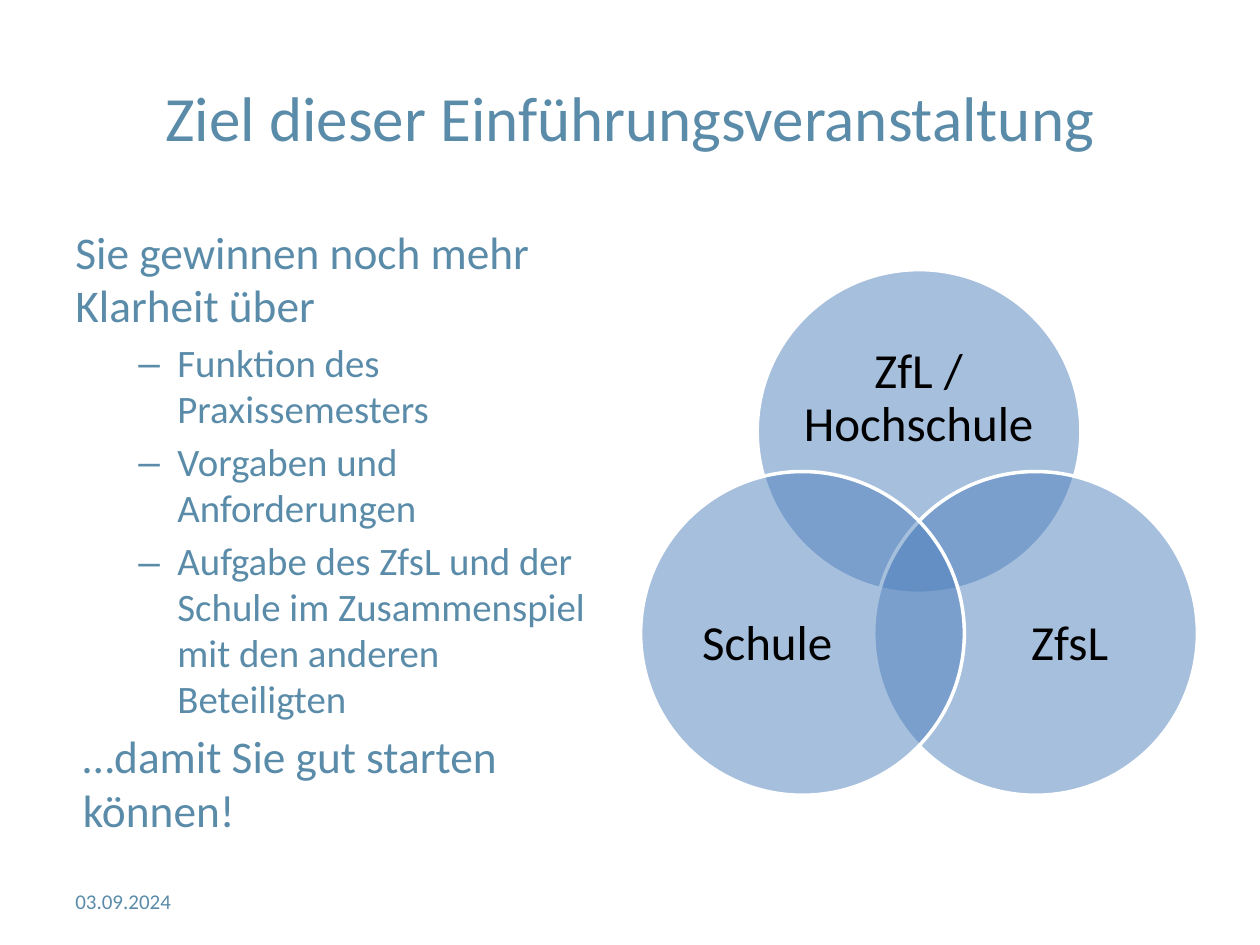
"""Build the slide on the aims of the introductory event."""
import math
from dataclasses import dataclass

from lxml import etree
from pptx import Presentation
from pptx.dml.color import RGBColor
from pptx.enum.shapes import MSO_SHAPE
from pptx.enum.text import MSO_ANCHOR, PP_ALIGN
from pptx.oxml.ns import qn
from pptx.util import Pt

OVAL = MSO_SHAPE.OVAL
TOP, MIDDLE = MSO_ANCHOR.TOP, MSO_ANCHOR.MIDDLE
LEFT, CENTER = PP_ALIGN.LEFT, PP_ALIGN.CENTER
BLANK_LAYOUT = 6
FONT = "Calibri"
TEAL, BLUE, WHITE, BLACK = "5A8CAA", "4F81BD", "FFFFFF", "000000"
DIAGRAM_CENTER = (525.2, 323.5)
DIAMETER = 185
ORBIT = 76.9


@dataclass
class Area:
    """A rectangle in points."""
    left: float
    top: float
    width: float
    height: float

    def lengths(self) -> list:
        """Return the four lengths for python-pptx."""
        return [Pt(value) for value in (self.left, self.top, self.width, self.height)]


@dataclass
class Line:
    """A body paragraph with its size, indents and optional bullet."""
    text: str
    size: float
    margin: float = 0
    indent: float = 0
    bullet: str = ""


@dataclass
class Circle:
    """A circle of the diagram, placed by angle, with its label area."""
    text: str
    angle: float
    label: Area


BODY = [
    Line("Sie gewinnen noch mehr Klarheit über", 25.9),
    *(Line(text, 22.2, 58.3, -22.3, "–") for text in (
        "Funktion des Praxissemesters",
        "Vorgaben und Anforderungen",
        "Aufgabe des ZfsL und der Schule im Zusammenspiel mit den anderen Beteiligten",
    )),
    Line("…damit Sie gut starten können!", 25.9, 4.3),
]
CIRCLES = [
    Circle("ZfL / Hochschule", -90, Area(457.2, 186.5, 135.4, 82.8)),
    Circle("ZfsL", 30, Area(555.8, 317.5, 110.9, 101.5)),
    Circle("Schule", 150, Area(383, 317.5, 110.9, 101.5)),
]


def color(value: str) -> RGBColor:
    """Turn a hex string into a colour."""
    return RGBColor.from_string(value)


def style(para, size: float, shade: str) -> None:
    """Format every run of a paragraph."""
    for span in para.runs:
        span.font.name = FONT
        span.font.size = Pt(size)
        span.font.color.rgb = color(shade)


def add_box(page, area: Area, anchor=TOP):
    """Add a wrapping text box and return its text frame."""
    frame = page.shapes.add_textbox(*area.lengths()).text_frame
    frame.word_wrap = True
    frame.vertical_anchor = anchor
    return frame


def add_text(page, area: Area, text: str, size: float, shade: str, align=LEFT):
    """Add a vertically centred one-paragraph box and return its frame."""
    frame = add_box(page, area, MIDDLE)
    frame.text = text
    para = frame.paragraphs[0]
    para.alignment = align
    style(para, size, shade)
    return frame


def add_body(page, area: Area, lines: list[Line]) -> None:
    """Add the body text with its dashed list."""
    frame = add_box(page, area)
    for number, line in enumerate(lines):
        para = frame.paragraphs[0] if number == 0 else frame.add_paragraph()
        para.text = line.text
        para.line_spacing = 0.98
        if number:
            para.space_before = Pt(line.size * 0.2)
        properties = para._p.get_or_add_pPr()
        properties.set("marL", str(Pt(line.margin)))
        properties.set("indent", str(Pt(line.indent)))
        if line.bullet:
            para.level = 1
            etree.SubElement(properties, qn("a:buFont")).set("typeface", "Arial")
            etree.SubElement(properties, qn("a:buChar")).set("char", line.bullet)
        style(para, line.size, TEAL)


def add_circle(page, circle: Circle) -> None:
    """Add a half-transparent circle and its label."""
    angle = math.radians(circle.angle)
    left = DIAGRAM_CENTER[0] + ORBIT * math.cos(angle) - DIAMETER / 2
    top = DIAGRAM_CENTER[1] + ORBIT * math.sin(angle) - DIAMETER / 2
    shape = page.shapes.add_shape(OVAL, *Area(left, top, DIAMETER, DIAMETER).lengths())
    shape.shadow.inherit = False
    shape.fill.solid()
    shape.fill.fore_color.rgb = color(BLUE)
    tint = shape._element.spPr.find(qn("a:solidFill")).find(qn("a:srgbClr"))
    etree.SubElement(tint, qn("a:alpha")).set("val", "50000")
    shape.line.color.rgb = color(WHITE)
    shape.line.width = Pt(2)
    frame = add_text(page, circle.label, circle.text, 28, BLACK, CENTER)
    frame.margin_left = frame.margin_right = frame.margin_top = frame.margin_bottom = 0
    frame.paragraphs[0].line_spacing = 0.9


def main() -> None:
    """Build and save the deck."""
    deck = Presentation()
    deck.slide_width, deck.slide_height = Pt(720), Pt(540)
    page = deck.slides.add_slide(deck.slide_layouts[BLANK_LAYOUT])
    add_text(page, Area(36, 21.6, 648, 90), "Ziel dieser Einführungsveranstaltung",
             36, TEAL, CENTER)
    add_body(page, Area(36, 126, 318.2, 356.4), BODY)
    add_text(page, Area(36, 500.4, 167.8, 28.8), "03.09.2024", 12, TEAL)
    for circle in CIRCLES:
        add_circle(page, circle)
    deck.save("out.pptx")


if __name__ == "__main__":
    main()
